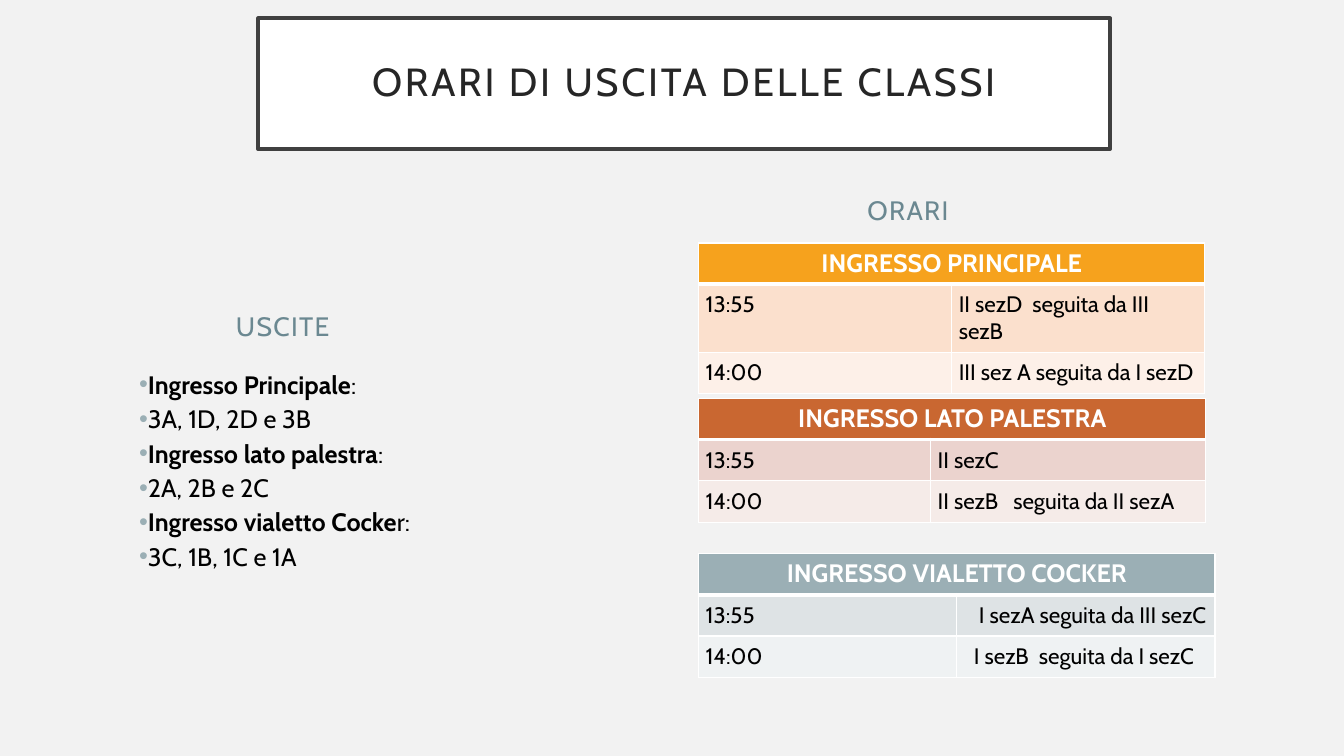
import dataclasses
import typing

import lxml.etree
import pptx
import pptx.dml.color
import pptx.enum.dml
import pptx.enum.text
import pptx.oxml.ns
import pptx.util

Inches = pptx.util.Inches
Pt = pptx.util.Pt
Align = pptx.enum.text.PP_ALIGN
Anchor = pptx.enum.text.MSO_ANCHOR


@dataclasses.dataclass(frozen=True)
class Theme:
    face: str = "Cabin"
    back: str = "F2F2F2"
    white: str = "FFFFFF"
    black: str = "000000"
    ink: str = "262626"
    frame: str = "404040"
    label: str = "6B8891"
    bullet: str = "9BAFB5"
    title: int = 28
    head: int = 19
    body: int = 18
    cell: int = 16


class Box(typing.NamedTuple):
    left: float
    top: float
    width: float
    height: float


class Entry(typing.NamedTuple):
    time: str
    group: str
    fill: str
    height: float = 0.41
    left: float = 0.07
    right: float = 0.07


class Board(typing.NamedTuple):
    name: str
    top: float
    cols: tuple[float, float]
    fill: str
    rows: tuple[Entry, ...]


class Exit(typing.NamedTuple):
    name: str
    tail: str
    groups: str


THEME = Theme()
LEFT = 6.93
HEAD = 0.41
PAD = 0.07

EXITS = (
    Exit("Ingresso Principale", ":", "3A, 1D, 2D e 3B"),
    Exit("Ingresso lato palestra", ":", "2A, 2B e 2C"),
    Exit("Ingresso vialetto Cocke", "r:", "3C, 1B, 1C e 1A"),
)

BOARDS = (
    Board("INGRESSO PRINCIPALE", 2.41, (2.51, 2.51), "F6A21D", (
        Entry("13:55", "II sezD  seguita da III sezB", "FBE0CD", 0.67, right=0.25),
        Entry("14:00", "III sez A seguita da I sezD", "FDF0E8"),
    )),
    Board("INGRESSO LATO PALESTRA", 3.95, (2.3, 2.73), "C96731", (
        Entry("13:55", "II sezC", "EBD3CE"),
        Entry("14:00", "II sezB   seguita da II sezA", "F5EBE8"),
    )),
    Board("INGRESSO VIALETTO COCKER", 5.49, (2.56, 2.56), "9BAFB5", (
        Entry("13:55", "I sezA seguita da III sezC", "DEE3E5", left=0.22, right=0.02),
        Entry("14:00", "I sezB  seguita da I sezC", "EFF2F3", left=0.17),
    )),
)


def tint(code: str) -> pptx.dml.color.RGBColor:
    return pptx.dml.color.RGBColor.from_string(code)


def node(base, tag: str, **attrs: str):
    item = lxml.etree.SubElement(base, pptx.oxml.ns.qn(tag))
    for key, value in attrs.items():
        item.set(key, value)
    return item


def paint(target, code: str) -> None:
    target.fill.solid()
    target.fill.fore_color.rgb = tint(code)


def style(para, size: int, code: str, bold: bool | None = False) -> None:
    font = para.font
    font.name, font.size, font.bold = THEME.face, Pt(size), bold
    font.color.rgb = tint(code)


def place(shape, box: Box):
    shape.left, shape.top, shape.width, shape.height = map(Inches, box)
    frame = shape.text_frame
    frame.word_wrap = True
    frame.auto_size = pptx.enum.text.MSO_AUTO_SIZE.NONE
    return frame


def label(shape, box: Box, text: str, size: int, code: str, gap: int):
    frame = place(shape, box)
    frame.text = text
    para = frame.paragraphs[0]
    para.alignment = Align.CENTER
    style(para, size, code)
    para.runs[0].font._element.set("spc", str(gap))
    return frame


def banner(shape) -> None:
    frame = label(shape, Box(2.56, 0.18, 8.45, 1.3), "ORARI DI USCITA DELLE CLASSI",
                  THEME.title, THEME.ink, 200)
    frame.vertical_anchor = Anchor.MIDDLE
    frame.margin_left = frame.margin_right = Inches(0.2)
    frame.margin_top = frame.margin_bottom = Inches(0.2)
    frame.paragraphs[0].line_spacing = 0.9
    paint(shape, THEME.white)
    shape.line.color.rgb = tint(THEME.frame)
    shape.line.width = Pt(2.5)


def heading(shape, left: float, top: float, text: str) -> None:
    frame = label(shape, Box(left, top, 4.67, 0.77), text, THEME.head, THEME.label, 100)
    frame.vertical_anchor = Anchor.BOTTOM
    frame.paragraphs[0].space_before = Pt(10)


def listing(shape) -> None:
    frame = place(shape, Box(0.72, 3.61, 4.67, 3.11))
    lines = [part for door in EXITS
             for part in (((door.name, True), (door.tail, False)), ((door.groups, False),))]
    for index, parts in enumerate(lines):
        para = frame.add_paragraph() if index else frame.paragraphs[0]
        para.alignment = Align.JUSTIFY
        para.space_before = Pt(3)
        props = para._p.get_or_add_pPr()
        props.set("marL", str(Inches(0.25)))
        props.set("indent", str(Inches(0.31)))
        node(node(props, "a:buClr"), "a:srgbClr", val=THEME.bullet)
        node(props, "a:buChar", char="•")
        style(para, THEME.body, THEME.black, None)
        for text, bold in parts:
            run = para.add_run()
            run.text, run.font.bold = text, bold


def border(cell, top: int, base: int) -> None:
    props = cell._tc.get_or_add_tcPr()
    for index, (side, width) in enumerate(zip("LRTB", (1, 1, top, base))):
        line = lxml.etree.Element(pptx.oxml.ns.qn(f"a:ln{side}"), w=str(Pt(width)))
        node(node(line, "a:solidFill"), "a:srgbClr", val=THEME.white)
        props.insert(index, line)


def timetable(slide, board: Board) -> None:
    heights = (HEAD, *(entry.height for entry in board.rows))
    box = Box(LEFT, board.top, sum(board.cols), sum(heights))
    table = slide.shapes.add_table(len(heights), 2, *map(Inches, box)).table
    for column, width in zip(table.columns, board.cols):
        column.width = Inches(width)
    for row, height in zip(table.rows, heights):
        row.height = Inches(height)
    head = table.cell(0, 0)
    head.merge(table.cell(0, 1))
    head.text = board.name
    para = head.text_frame.paragraphs[0]
    para.alignment = Align.CENTER
    style(para, THEME.body, THEME.white, True)
    for cell in table.rows[0].cells:
        paint(cell, board.fill)
        border(cell, 1, 3)
    for index, entry in enumerate(board.rows, 1):
        pads = ((PAD, PAD), (entry.left, entry.right))
        for cell, text, (left, right) in zip(table.rows[index].cells, entry[:2], pads):
            cell.text = text
            cell.margin_left, cell.margin_right = Inches(left), Inches(right)
            cell.margin_top = cell.margin_bottom = Inches(PAD)
            style(cell.text_frame.paragraphs[0], THEME.cell, THEME.black)
            paint(cell, entry.fill)
            border(cell, 3 if index == 1 else 1, 1)


def main() -> None:
    deck = pptx.Presentation()
    deck.slide_width, deck.slide_height = Inches(13.33), Inches(7.5)
    slide = deck.slides.add_slide(deck.slide_layouts[4])
    paint(slide.background, THEME.back)
    title, exits, doors, times, spare = slide.placeholders
    spare._element.getparent().remove(spare._element)
    banner(title)
    heading(exits, 0.47, 2.67, "USCITE")
    listing(doors)
    heading(times, 6.67, 1.52, "ORARI")
    for board in BOARDS:
        timetable(slide, board)
    deck.save("out.pptx")


if __name__ == "__main__":
    main()
